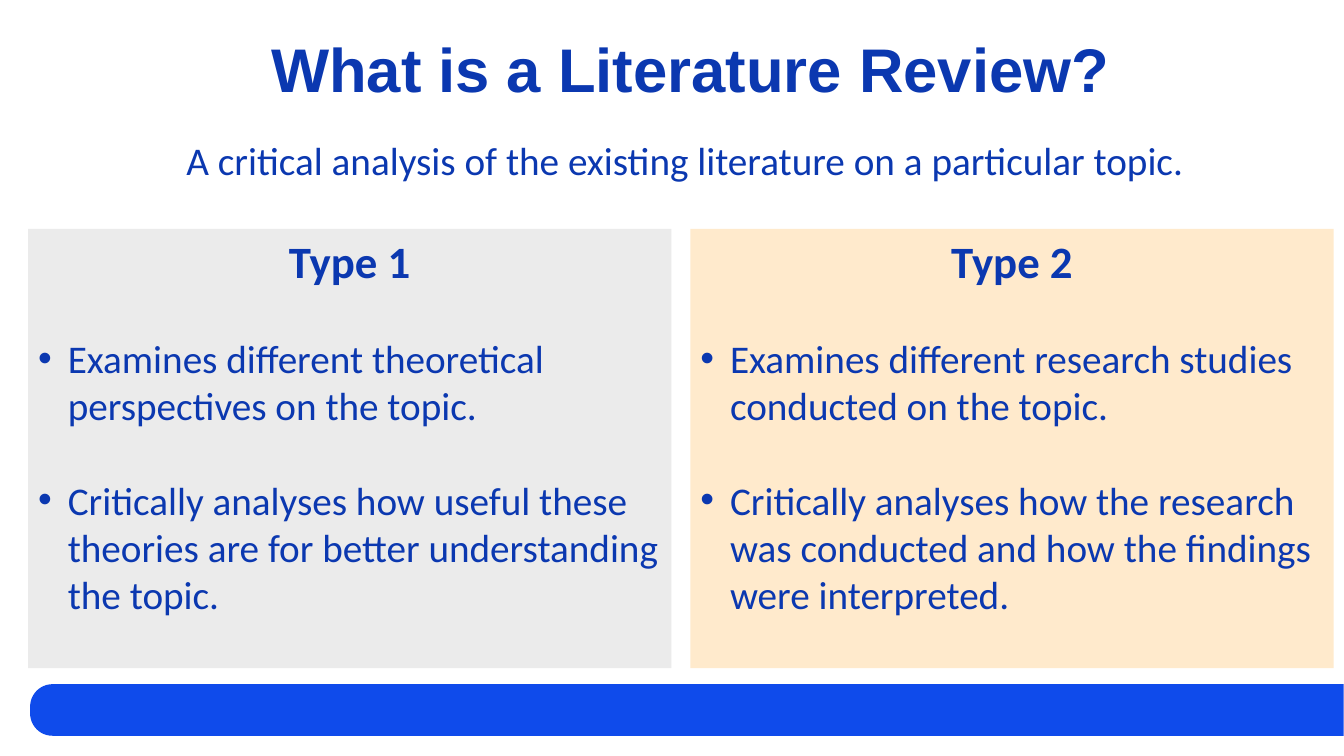
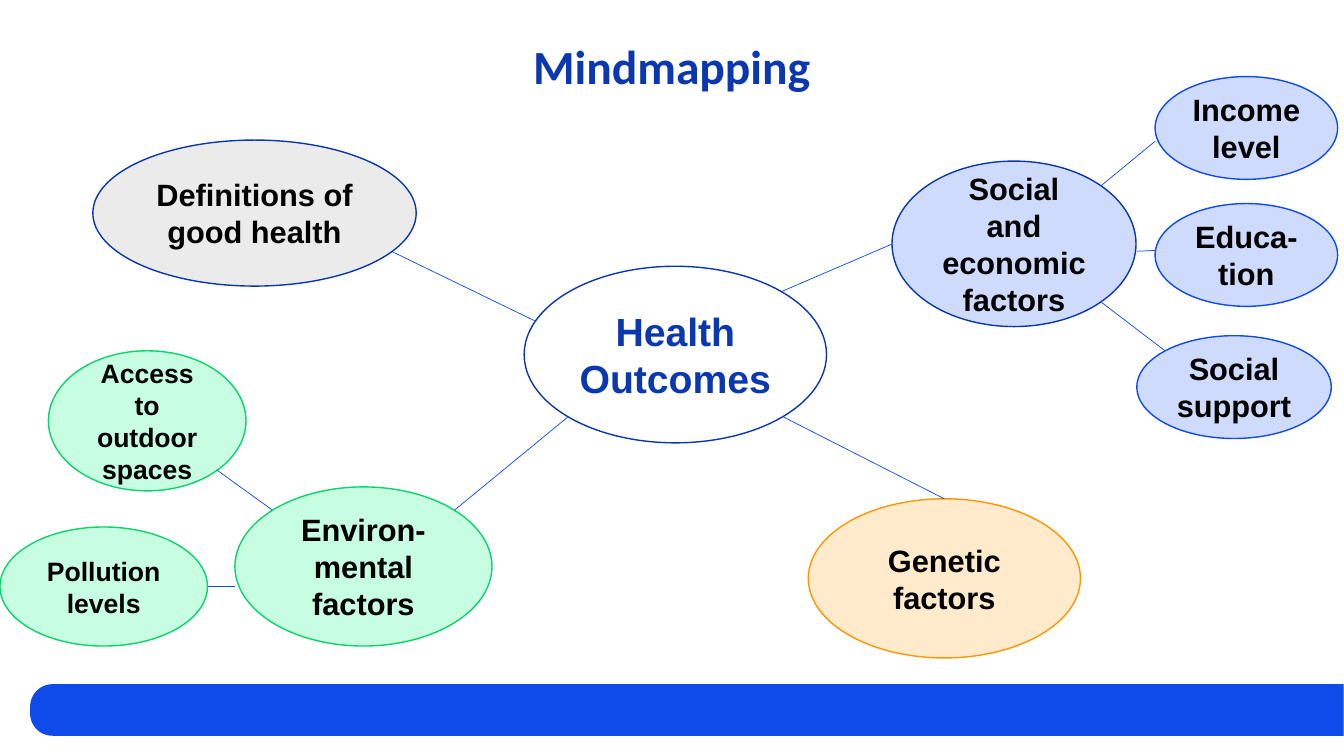
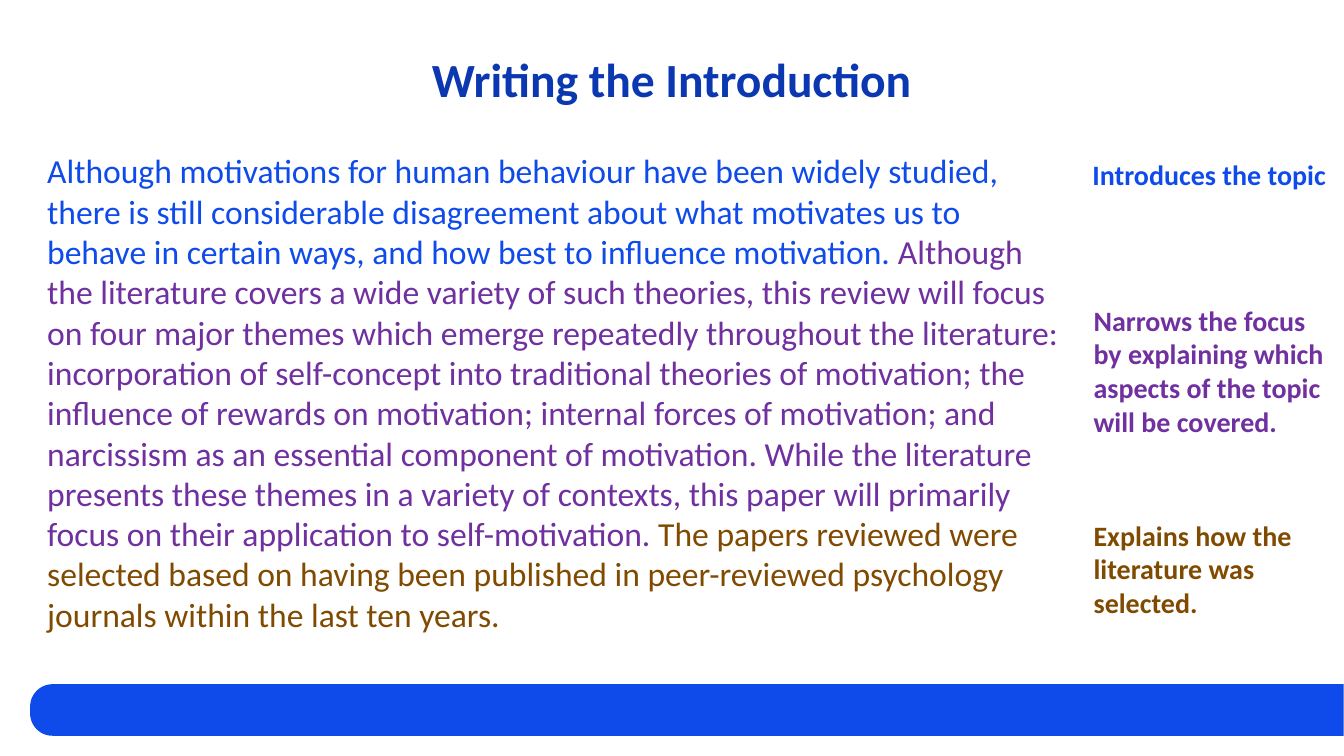
"""Three slides on literature reviews: definition, mind map and introduction."""
from lxml import etree
from pptx import Presentation
from pptx.dml.color import RGBColor
from pptx.enum.shapes import MSO_CONNECTOR as CONN, MSO_SHAPE as SHAPE
from pptx.enum.text import MSO_ANCHOR as ANCHOR, PP_ALIGN as ALIGN
from pptx.oxml.ns import qn
from pptx.util import Cm, Pt

NAVY = RGBColor(0x0B, 0x38, 0xB0)
OUTLINE = RGBColor(0x0B, 0x37, 0xAE)
BLUE = RGBColor(0x0F, 0x4B, 0xEB)
PALE_BLUE = RGBColor(0xCE, 0xDB, 0xFC)
GREEN = RGBColor(0x09, 0xD3, 0x69)
PALE_GREEN = RGBColor(0xC7, 0xFD, 0xE1)
ORANGE = RGBColor(0xFF, 0x96, 0x00)
PALE_ORANGE = RGBColor(0xFF, 0xEA, 0xCC)
GREY = RGBColor(0xEB, 0xEB, 0xEB)
PURPLE = RGBColor(0x70, 0x30, 0xA0)
BROWN = RGBColor(0x80, 0x4B, 0x00)
WHITE = RGBColor(0xFF, 0xFF, 0xFF)
BLACK = RGBColor(0, 0, 0)


def style(p, size, color, bold=False, font="Calibri", align=ALIGN.LEFT):
    p.alignment = align
    for r in p.runs:
        r.font.size = Pt(size)
        r.font.name = font
        r.font.bold = bold
        r.font.color.rgb = color


def add_box(s, kind, box, fill=None, line=None):
    sp = s.shapes.add_shape(kind, *[Cm(v) for v in box])
    sp.shadow.inherit = False
    if fill is None:
        sp.fill.background()
    else:
        sp.fill.solid()
        sp.fill.fore_color.rgb = fill
    if line is None:
        sp.line.fill.background()
    else:
        sp.line.color.rgb = line
        sp.line.width = Pt(1)
    sp.text_frame.word_wrap = True
    sp.text_frame.vertical_anchor = ANCHOR.TOP
    return sp


prs = Presentation()
prs.slide_width, prs.slide_height = Cm(33.87), Cm(19.05)

titles = [
    ("What is a Literature Review?", 3.07, 0.86, 44, "Arial"),
    ("Mindmapping", 2.59, 0.97, 34, "Calibri"),
    ("Writing the Introduction", 2.59, 1.3, 34, "Calibri"),
]
for title, left, top, size, font in titles:
    s = prs.slides.add_slide(prs.slide_layouts[6])
    band = add_box(s, SHAPE.ROUND_2_SAME_RECTANGLE, (16.66, 1.34, 1.3, 33.1), BLUE)
    band.rotation = 270
    band.adjustments[0] = 0.433
    tf = add_box(s, SHAPE.RECTANGLE, (left, top, 28.68, 2.77)).text_frame
    tf.text = title
    tf.paragraphs[0].line_spacing = 0.9
    style(tf.paragraphs[0], size, NAVY, True, font, ALIGN.CENTER)
review, mindmap, intro = prs.slides

cards = [
    (0.71, GREY, "Type 1", [
        "Examines different theoretical perspectives on the topic.",
        "Critically analyses how useful these theories are for better understanding the topic.",
    ]),
    (17.4, PALE_ORANGE, "Type 2", [
        "Examines different research studies conducted on the topic.",
        "Critically analyses how the research was conducted and how the findings were interpreted.",
    ]),
]
for left, fill, heading, points in cards:
    tf = add_box(review, SHAPE.RECTANGLE, (left, 5.77, 16.21, 11.07), fill).text_frame
    tf.text = heading
    style(tf.paragraphs[0], 32, NAVY, True, align=ALIGN.CENTER)
    for point in points:
        p = tf.add_paragraph()
        p.text = point
        p.space_before = Pt(33.6)
        pPr = p._p.get_or_add_pPr()
        pPr.set("marL", str(Cm(0.75)))
        pPr.set("indent", str(-Cm(0.75)))
        etree.SubElement(pPr, qn("a:buFont")).set("typeface", "Arial")
        etree.SubElement(pPr, qn("a:buChar")).set("char", "•")
        style(p, 28, NAVY)

tf = add_box(review, SHAPE.RECTANGLE, (4.45, 3.3, 25.91, 2.49)).text_frame
tf.text = "A critical analysis of the existing literature on a particular topic."
style(tf.paragraphs[0], 28, NAVY)

bubbles = [
    ("Health Outcomes", (13.21, 6.71, 7.62, 4.45), WHITE, OUTLINE, 28, NAVY),
    ("Definitions of good health", (2.34, 3.53, 8.15, 3.68), GREY, OUTLINE, 22, BLACK),
    ("Social and economic factors", (22.48, 4.06, 6.15, 4.17), PALE_BLUE, OUTLINE, 22, BLACK),
    ("Environ-mental factors", (5.92, 12.27, 6.48, 4.01), PALE_GREEN, GREEN, 22, BLACK),
    ("Genetic factors", (20.37, 12.57, 6.86, 4.01), PALE_ORANGE, ORANGE, 22, BLACK),
    ("Income level", (29.11, 1.93, 4.6, 2.59), PALE_BLUE, BLUE, 22, BLACK),
    ("Educa-tion", (29.11, 5.13, 4.6, 2.59), PALE_BLUE, BLUE, 22, BLACK),
    ("Social support", (28.65, 8.46, 4.9, 2.59), PALE_BLUE, BLUE, 22, BLACK),
    ("Access to outdoor spaces", (1.22, 8.84, 4.98, 3.53), PALE_GREEN, GREEN, 19, BLACK),
    ("Pollution levels", (0, 13.28, 5.23, 3), PALE_GREEN, GREEN, 19, BLACK),
]
for text, box, fill, line, size, color in bubbles:
    tf = add_box(mindmap, SHAPE.OVAL, box, fill, line).text_frame
    tf.vertical_anchor = ANCHOR.MIDDLE
    tf.text = text
    style(tf.paragraphs[0], size, color, True, "Arial", ALIGN.CENTER)

branches = [
    (19.71, 7.34, 22.48, 6.15),
    (19.71, 10.49, 23.8, 12.57),
    (11.46, 12.85, 14.33, 10.49),
    (9.88, 6.34, 13.51, 8.1),
    (29.11, 3.56, 27.76, 4.67),
    (27.76, 7.62, 29.36, 8.84),
    (28.65, 6.33, 29.11, 6.31),
    (6.86, 12.85, 5.46, 11.84),
    (5.92, 14.78, 5.23, 14.78),
]
for ends in branches:
    branch = mindmap.shapes.add_connector(CONN.STRAIGHT, *[Cm(v) for v in ends])
    branch.line.color.rgb = BLUE
    branch.line.width = Pt(0.5)
    etree.SubElement(branch._element.spPr, qn("a:effectLst"))

passages = [
    ("Although motivations for human behaviour have been widely studied, there is still "
     "considerable disagreement about what motivates us to behave in certain ways, and how "
     "best to influence motivation. ", BLUE),
    ("Although the literature covers a wide variety of such theories, this review will focus "
     "on four major themes which emerge repeatedly throughout the literature: incorporation "
     "of self-concept into traditional theories of motivation; the influence of rewards on "
     "motivation; internal forces of motivation; and narcissism as an essential component of "
     "motivation. While the literature presents these themes in a variety of contexts, this "
     "paper will primarily focus on their application to self-motivation. ", PURPLE),
    ("The papers reviewed were selected based on having been published in peer-reviewed "
     "psychology journals within the last ten years.", BROWN),
]
p = add_box(intro, SHAPE.RECTANGLE, (0.94, 3.66, 26.11, 11.25)).text_frame.paragraphs[0]
for text, color in passages:
    p.add_run().text = text
style(p, 24, BLUE)
for r, (text, color) in zip(p.runs, passages):
    r.font.color.rgb = color

notes = [
    ("Introduces the topic", (27.28, 3.84, 6.56, 1.12), BLUE),
    ("Narrows the focus by explaining which aspects of the topic will be covered.",
     (27.31, 7.52, 6.3, 3.68), PURPLE),
    ("Explains how the literature was selected.", (27.31, 12.93, 6.3, 2.82), BROWN),
]
for text, box, color in notes:
    sp = add_box(intro, SHAPE.RECTANGLE, box, line=WHITE)
    sp.line.width = Pt(0.75)
    sp.text_frame.text = text
    style(sp.text_frame.paragraphs[0], 20, color, True)

prs.save("out.pptx")
